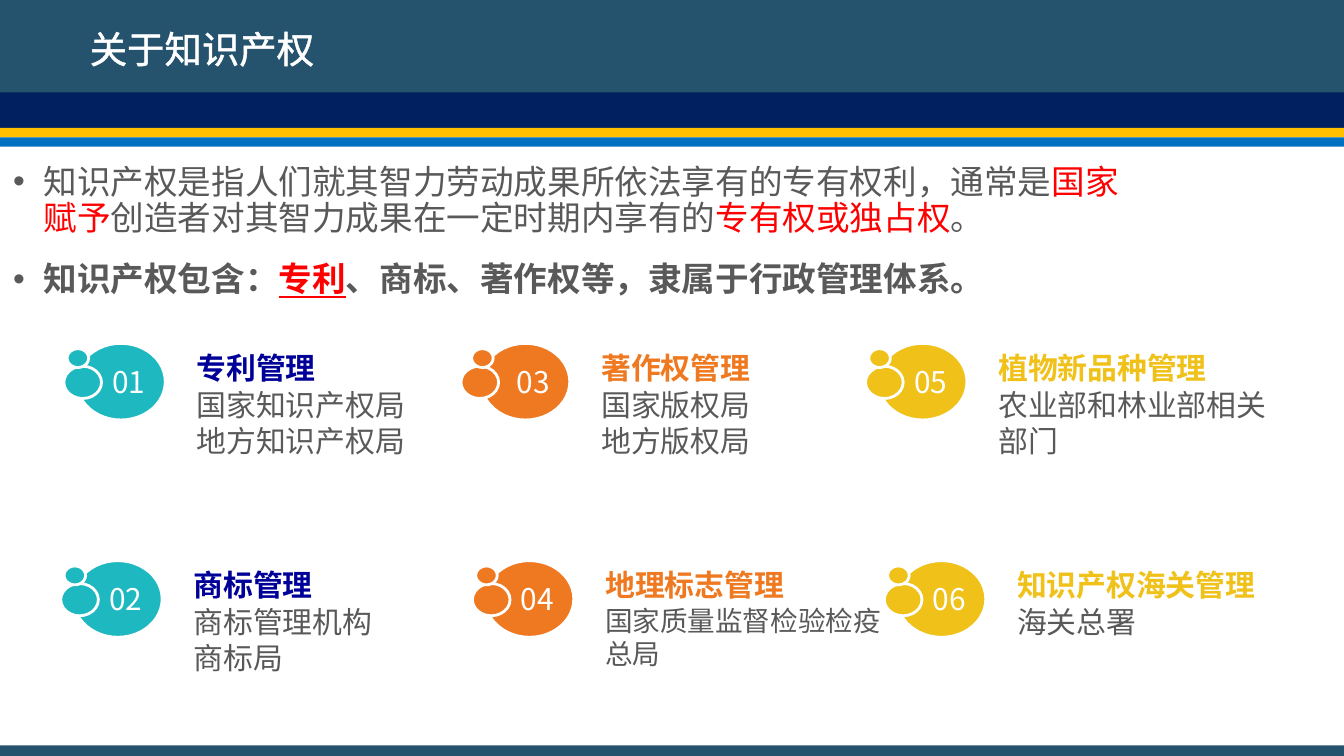
from dataclasses import dataclass
from typing import NamedTuple

from lxml.etree import SubElement
from pptx import Presentation
from pptx.dml.color import RGBColor
from pptx.enum.shapes import MSO_SHAPE
from pptx.enum.text import MSO_ANCHOR, PP_ALIGN
from pptx.oxml.ns import qn
from pptx.util import Inches, Pt

FONT = "Noto Sans CJK SC"
WHITE = RGBColor(0xFF, 0xFF, 0xFF)
GRAY = RGBColor(0x59, 0x59, 0x59)
RED = RGBColor(0xFF, 0x00, 0x00)
NAVY = RGBColor(0x00, 0x20, 0x60)
SLATE = RGBColor(0x25, 0x53, 0x6E)
AMBER = RGBColor(0xFF, 0xC0, 0x00)
BLUE = RGBColor(0x00, 0x70, 0xC0)
INK = RGBColor(0x00, 0x00, 0x99)
TEAL = RGBColor(0x1E, 0xB8, 0xC1)
ORANGE = RGBColor(0xEF, 0x79, 0x20)
GOLD = RGBColor(0xEF, 0xC1, 0x19)

# The grid: 100 columns and 56.25 rows of a tenth of an inch
COLS, ROWS = 100, 56.25
UNIT = Inches(0.1)


class Box(NamedTuple):
    col: float
    row: float
    wide: float
    high: float

    def shift(self, col: float, row: float) -> "Box":
        return Box(self.col + col, self.row + row, self.wide, self.high)

    def emu(self) -> list[int]:
        return [round(n * UNIT) for n in self]


@dataclass
class Band:
    top: float
    high: float
    color: RGBColor


@dataclass
class Part:
    text: str
    color: RGBColor = GRAY
    bold: bool = False
    line: bool = False


@dataclass
class Item:
    label: str
    col: float
    row: float
    fill: RGBColor
    ink: RGBColor
    head: str
    body: str
    size: float = 16
    side: float = -0.95  # offset of the middle bubble


BANDS = [
    Band(0, 9.6, NAVY),
    Band(9.52, 0.7, AMBER),
    Band(10.22, 0.7, BLUE),
    Band(0, 6.87, SLATE),
    Band(55.47, 0.78, SLATE),
]

POINTS = [
    [
        Part("知识产权是指人们就其智力劳动成果所依法享有的专有权利，通常是"),
        Part("国家赋予", RED),
        Part("创造者对其智力成果在一定时期内享有的"),
        Part("专有权或独占权", RED),
        Part("。"),
    ],
    [
        Part("知识产权包含：", bold=True),
        Part("专利", RED, bold=True, line=True),
        Part("、商标、著作权等，隶属于行政管理体系。", bold=True),
    ],
]

TOP, LOW = 25.55, 41.72
ITEMS = [
    Item("01", 5.7, TOP, TEAL, INK, "专利管理", "国家知识产权局\n地方知识产权局"),
    Item("05", 65.35, TOP, GOLD, GOLD, "植物新品种管理", "农业部和林业部相关部门"),
    Item("02", 5.47, LOW, TEAL, INK, "商标管理", "商标管理机构\n商标局"),
    Item("04", 36.1, LOW, ORANGE, ORANGE, "地理标志管理",
         "国家质量监督检验检疫\n总局", size=14.8),
    Item("06", 66.75, LOW, GOLD, GOLD, "知识产权海关管理", "海关总署"),
    Item("03", 35.8, TOP, ORANGE, ORANGE, "著作权管理",
         "国家版权局\n地方版权局", side=-1.5),
]

# Boxes of one item, counted from its large bubble
BUBBLE = Box(0, 0, 6.6, 5.7)
MIDDLE = Box(0, 1.7, 2.8, 2.4)
SMALL = Box(-0.7, 0.4, 1.6, 1.4)
HEAD = Box(7.95, -0.6, 24.1, 3.7)
BODY = Box(7.95, 2.73, 24.1, 6.3)


def style(run, size: float, color: RGBColor, bold: bool = False) -> None:
    font = run.font
    font.name, font.size, font.bold = FONT, Pt(size), bold
    font.color.rgb = color
    SubElement(run._r.get_or_add_rPr(), qn("a:ea"), typeface=FONT)


def write(frame, text: str, size: float, color: RGBColor, bold: bool = False) -> None:
    frame.text = text
    frame.word_wrap = True
    for para in frame.paragraphs:
        for run in para.runs:
            style(run, size, color, bold)


def shape(shapes, kind: MSO_SHAPE, box: Box, color: RGBColor):
    form = shapes.add_shape(kind, *box.emu())
    form.shadow.inherit = False
    form.fill.solid()
    form.fill.fore_color.rgb = color
    form.line.fill.background()
    return form


def oval(shapes, box: Box, color: RGBColor):
    form = shape(shapes, MSO_SHAPE.OVAL, box, color)
    form.line.color.rgb = WHITE
    form.line.width = Pt(1.5)
    return form


def title(shapes, text: str) -> None:
    frame = shapes.add_textbox(*Box(5.7, 1, 88.6, 4.8).emu()).text_frame
    write(frame, text, 20, WHITE)
    frame.vertical_anchor = MSO_ANCHOR.BOTTOM
    para = frame.paragraphs[0]
    para.line_spacing = 0.9
    # Thin white outline around the letters
    props = para.runs[0]._r.get_or_add_rPr()
    edge = SubElement(props, qn("a:ln"), w=str(Pt(0.25)))
    fill = SubElement(edge, qn("a:solidFill"))
    SubElement(fill, qn("a:srgbClr"), val=str(WHITE))
    props.insert(0, edge)


def points(shapes, rows: list[list[Part]]) -> None:
    frame = shapes.add_textbox(*Box(0, 11.8, 85.2, 43.7).emu()).text_frame
    frame.word_wrap = True
    for n, parts in enumerate(rows):
        para = frame.add_paragraph() if n else frame.paragraphs[0]
        para.line_spacing = 0.9
        para.space_before = Pt(13.5 if n else 0)
        props = para._p.get_or_add_pPr()
        props.set("marL", str(Pt(16.2)))
        props.set("indent", str(-Pt(16.2)))
        SubElement(props, qn("a:buFont"), typeface="Arial")
        SubElement(props, qn("a:buChar"), char="•")
        for part in parts:
            run = para.add_run()
            run.text = part.text
            style(run, 18, part.color, part.bold)
            run.font.underline = part.line


def entry(shapes, item: Item) -> None:
    group = shapes.add_group_shape().shapes
    # Numbered bubble with two small ones
    frame = oval(group, BUBBLE.shift(item.col, item.row), item.fill).text_frame
    write(frame, item.label, 16, WHITE)
    frame.margin_left = Inches(0.12)
    frame.margin_right = frame.margin_top = frame.margin_bottom = 0
    frame.vertical_anchor = MSO_ANCHOR.MIDDLE
    frame.paragraphs[0].alignment = PP_ALIGN.CENTER
    oval(group, MIDDLE.shift(item.col + item.side, item.row), item.fill)
    oval(group, SMALL.shift(item.col, item.row), item.fill)
    # Heading and offices in charge
    head = group.add_textbox(*HEAD.shift(item.col, item.row).emu()).text_frame
    write(head, item.head, 16, item.ink, True)
    head.vertical_anchor = MSO_ANCHOR.MIDDLE
    head.paragraphs[0].line_spacing = 1.4
    body = group.add_textbox(*BODY.shift(item.col, item.row).emu()).text_frame
    write(body, item.body, item.size, GRAY)


def main() -> None:
    deck = Presentation()
    deck.slide_width, deck.slide_height = round(COLS * UNIT), round(ROWS * UNIT)
    shapes = deck.slides.add_slide(deck.slide_layouts[6]).shapes
    for band in BANDS:
        shape(shapes, MSO_SHAPE.RECTANGLE, Box(0, band.top, COLS, band.high), band.color)
    title(shapes, "关于知识产权")
    points(shapes, POINTS)
    for item in ITEMS:
        entry(shapes, item)
    deck.save("out.pptx")


if __name__ == "__main__":
    main()
